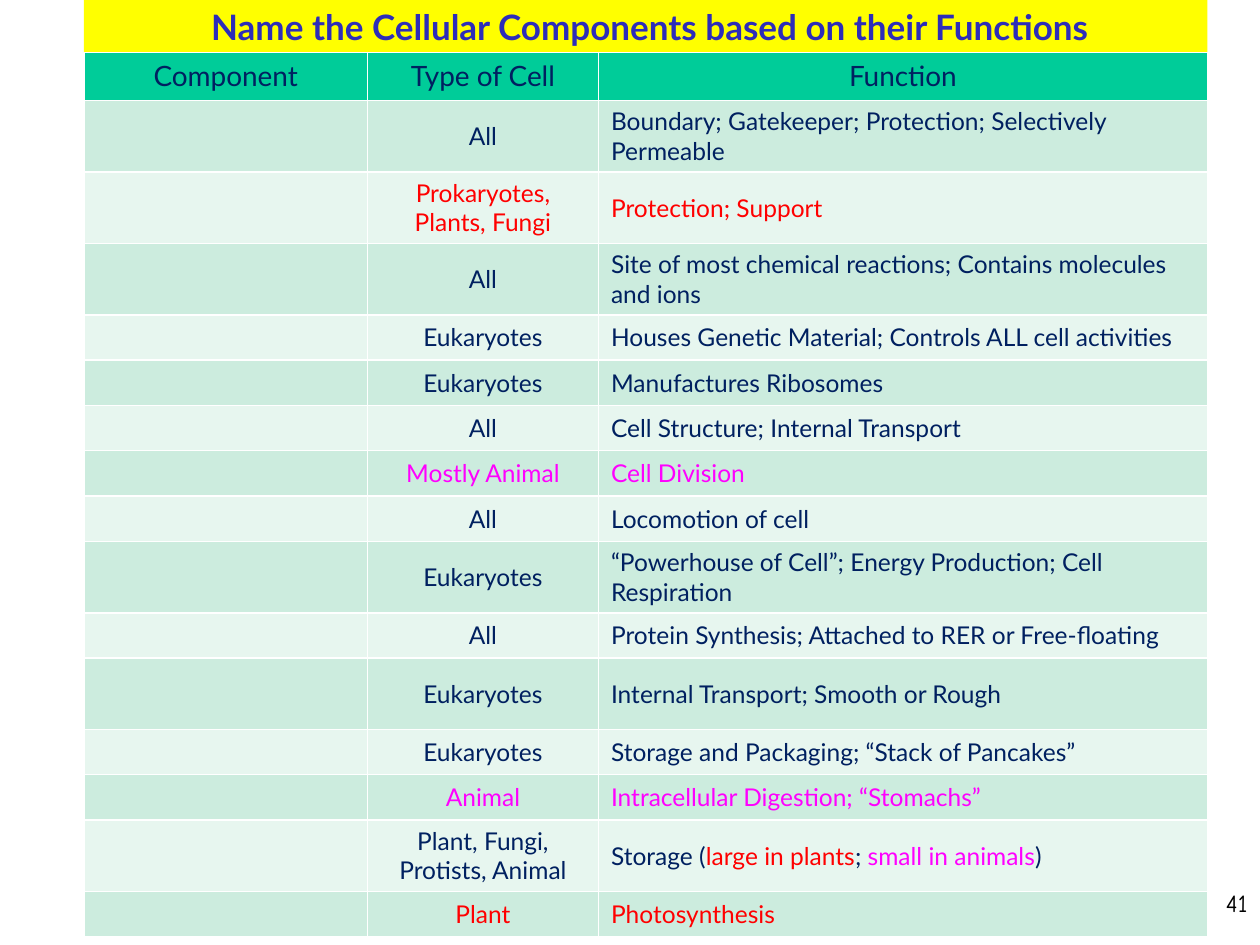
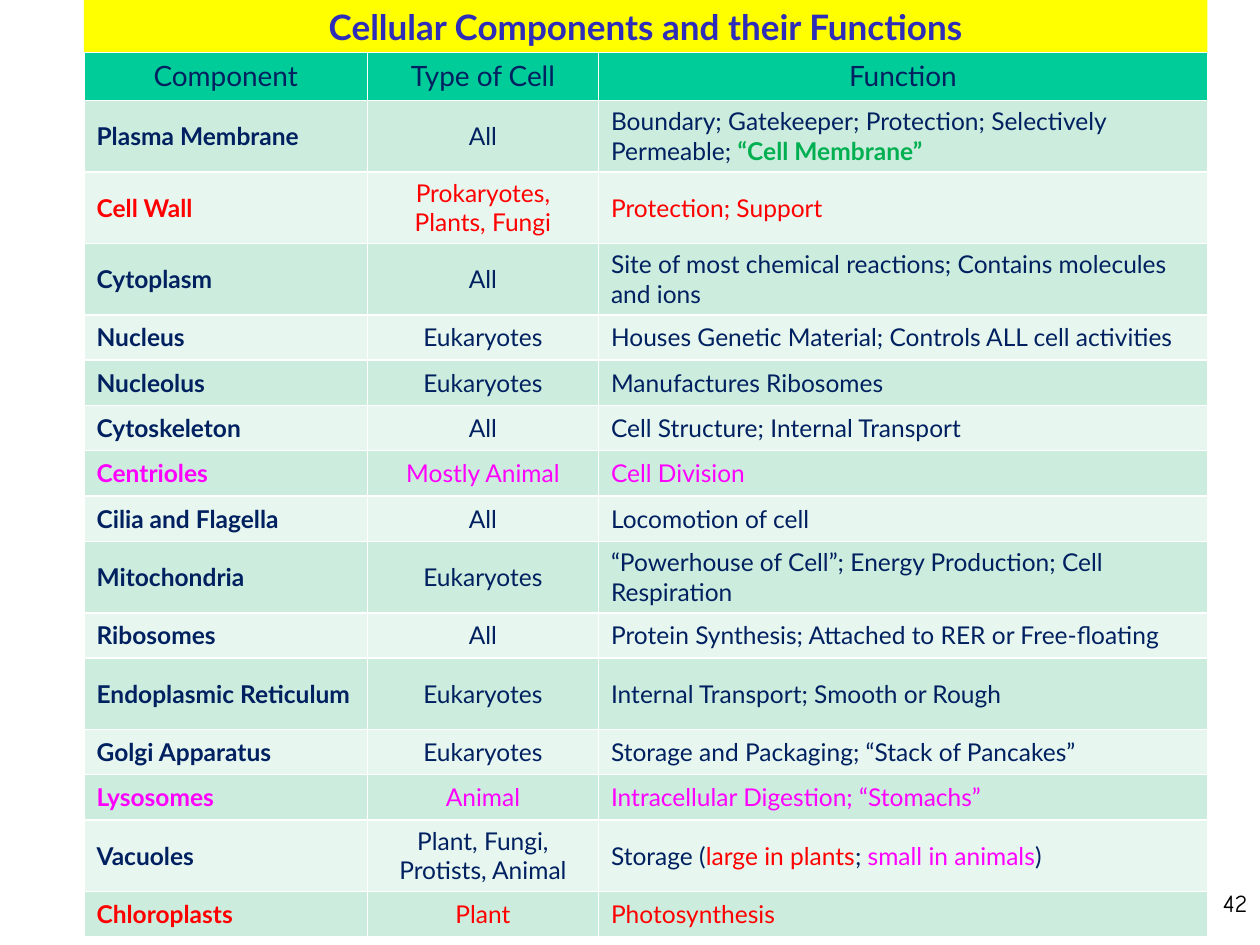
import pptx
import pptx.util
import pptx.dml.color
import pptx.enum.shapes
import pptx.enum.text
from lxml import etree

Pt = pptx.util.Pt
RGBColor = pptx.dml.color.RGBColor
ALIGN = pptx.enum.text.PP_ALIGN
ANCHOR = pptx.enum.text.MSO_ANCHOR

YELLOW = RGBColor(0xFF, 0xFF, 0x00)
INDIGO = RGBColor(0x2D, 0x2D, 0xB9)
TEAL = RGBColor(0x00, 0xCC, 0x99)
MINT = RGBColor(0xCC, 0xEC, 0xDE)
PALE = RGBColor(0xE7, 0xF6, 0xEF)
NAVY = RGBColor(0x00, 0x20, 0x60)
RED = RGBColor(0xFF, 0x00, 0x00)
MAGENTA = RGBColor(0xFF, 0x00, 0xFF)
GREEN = RGBColor(0x00, 0xB0, 0x50)
BLACK = RGBColor(0x00, 0x00, 0x00)

FONT = "Lato"
NUMBER_FONT = "Comic Neue"
BODY_SIZE = 14
HEADER_HEIGHT = 27.4
SINGLE_HEIGHT = 25.9
DOUBLE_HEIGHT = 40.8
COLUMN_WIDTHS = (162, 132, 348)
TITLE_BOX = (48, 0, 642, 30)
TABLE_BOX = (48, 30, 642, 505.3)
NUMBER_BOX = (570, 504, 150, 36)

HEADINGS = ("Component", "Type of Cell", "Function")
TWO_LINE_COMPONENTS = {"Plasma Membrane", "Cell Wall", "Cytoplasm", "Mitochondria",
                       "Endoplasmic Reticulum", "Vacuoles"}
COMPONENTS = [
    ("Plasma Membrane", "All", "Boundary; Gatekeeper; Protection; Selectively Permeable", NAVY),
    ("Cell Wall", "Prokaryotes, Plants, Fungi", "Protection; Support", RED),
    ("Cytoplasm", "All", "Site of most chemical reactions; Contains molecules and ions", NAVY),
    ("Nucleus", "Eukaryotes", "Houses Genetic Material; Controls ALL cell activities", NAVY),
    ("Nucleolus", "Eukaryotes", "Manufactures Ribosomes", NAVY),
    ("Cytoskeleton", "All", "Cell Structure; Internal Transport", NAVY),
    ("Centrioles", "Mostly Animal", "Cell Division", MAGENTA),
    ("Cilia and Flagella", "All", "Locomotion of cell", NAVY),
    ("Mitochondria", "Eukaryotes", "“Powerhouse of Cell”; Energy Production; Cell Respiration", NAVY),
    ("Ribosomes", "All", "Protein Synthesis; Attached to RER or Free-floating", NAVY),
    ("Endoplasmic Reticulum", "Eukaryotes", "Internal Transport; Smooth or Rough", NAVY),
    ("Golgi Apparatus", "Eukaryotes", "Storage and Packaging; “Stack of Pancakes”", NAVY),
    ("Lysosomes", "Animal", "Intracellular Digestion; “Stomachs”", MAGENTA),
    ("Vacuoles", "Plant, Fungi, Protists, Animal",
     [("Storage (", NAVY), ("large in plants", RED), ("; ", NAVY),
      ("small in animals", MAGENTA), (")", NAVY)], NAVY),
    ("Chloroplasts", "Plant", "Photosynthesis", RED),
]


def add_run(p, text, color, size=BODY_SIZE, bold=False, font=FONT):
    r = p.add_run()
    r.text = text
    r.font.name = font
    r.font.size = Pt(size)
    r.font.bold = bold
    r.font.color.rgb = color


def fill_cell(cell, fill, anchor=ANCHOR.MIDDLE, align=ALIGN.LEFT):
    cell.fill.solid()
    cell.fill.fore_color.rgb = fill
    cell.vertical_anchor = anchor
    p = cell.text_frame.paragraphs[0]
    p.alignment = align
    return p


def set_empty_size(p, size):
    tag = pptx.oxml.ns.qn("a:endParaRPr")
    etree.SubElement(p._p, tag).set("sz", str(size * 100))


def add_title(s, box, text):
    sp = s.shapes.add_shape(pptx.enum.shapes.MSO_SHAPE.RECTANGLE, *map(Pt, box))
    sp.shadow.inherit = False
    sp.fill.solid()
    sp.fill.fore_color.rgb = YELLOW
    sp.line.fill.background()
    tf = sp.text_frame
    tf.word_wrap = True
    tf.vertical_anchor = ANCHOR.MIDDLE
    p = tf.paragraphs[0]
    p.alignment = ALIGN.CENTER
    add_run(p, text, INDIGO, 20, True)


def add_component_table(s, box, answers):
    shape = s.shapes.add_table(len(COMPONENTS) + 1, len(HEADINGS), *map(Pt, box))
    table = shape.table
    for column, width in zip(table.columns, COLUMN_WIDTHS):
        column.width = Pt(width)

    table.rows[0].height = Pt(HEADER_HEIGHT)
    for cell, heading in zip(table.rows[0].cells, HEADINGS):
        add_run(fill_cell(cell, TEAL, ANCHOR.TOP, ALIGN.CENTER), heading, NAVY, 16)

    for i, (name, cell_type, function, color) in enumerate(COMPONENTS, 1):
        row = table.rows[i]
        row.height = Pt(DOUBLE_HEIGHT if name in TWO_LINE_COMPONENTS else SINGLE_HEIGHT)
        fill = MINT if i % 2 else PALE
        name_cell, type_cell, function_cell = row.cells

        p = fill_cell(name_cell, fill)
        if answers:
            add_run(p, name, color, bold=True)
        else:
            set_empty_size(p, BODY_SIZE)

        add_run(fill_cell(type_cell, fill, align=ALIGN.CENTER), cell_type, color)

        p = fill_cell(function_cell, fill)
        parts = [(function, color)] if isinstance(function, str) else function
        for text, part_color in parts:
            add_run(p, text, part_color)
        if answers and name == "Plasma Membrane":
            add_run(p, "; ", color)
            add_run(p, "“Cell Membrane”", GREEN, bold=True)


def add_slide_number(s, box, number):
    tf = s.shapes.add_textbox(*map(Pt, box)).text_frame
    tf.word_wrap = True
    p = tf.paragraphs[0]
    p.alignment = ALIGN.RIGHT
    add_run(p, str(number), BLACK, font=NUMBER_FONT)


def add_component_slide(prs, title, number, answers):
    s = prs.slides.add_slide(prs.slide_layouts[6])
    add_title(s, TITLE_BOX, title)
    add_component_table(s, TABLE_BOX, answers)
    add_slide_number(s, NUMBER_BOX, number)


def main():
    prs = pptx.Presentation()
    prs.slide_width, prs.slide_height = Pt(720), Pt(540)
    add_component_slide(prs, " Name the Cellular Components based on their Functions", 41, False)
    add_component_slide(prs, "Cellular Components and their Functions", 42, True)
    prs.save("out.pptx")


if __name__ == "__main__":
    main()
